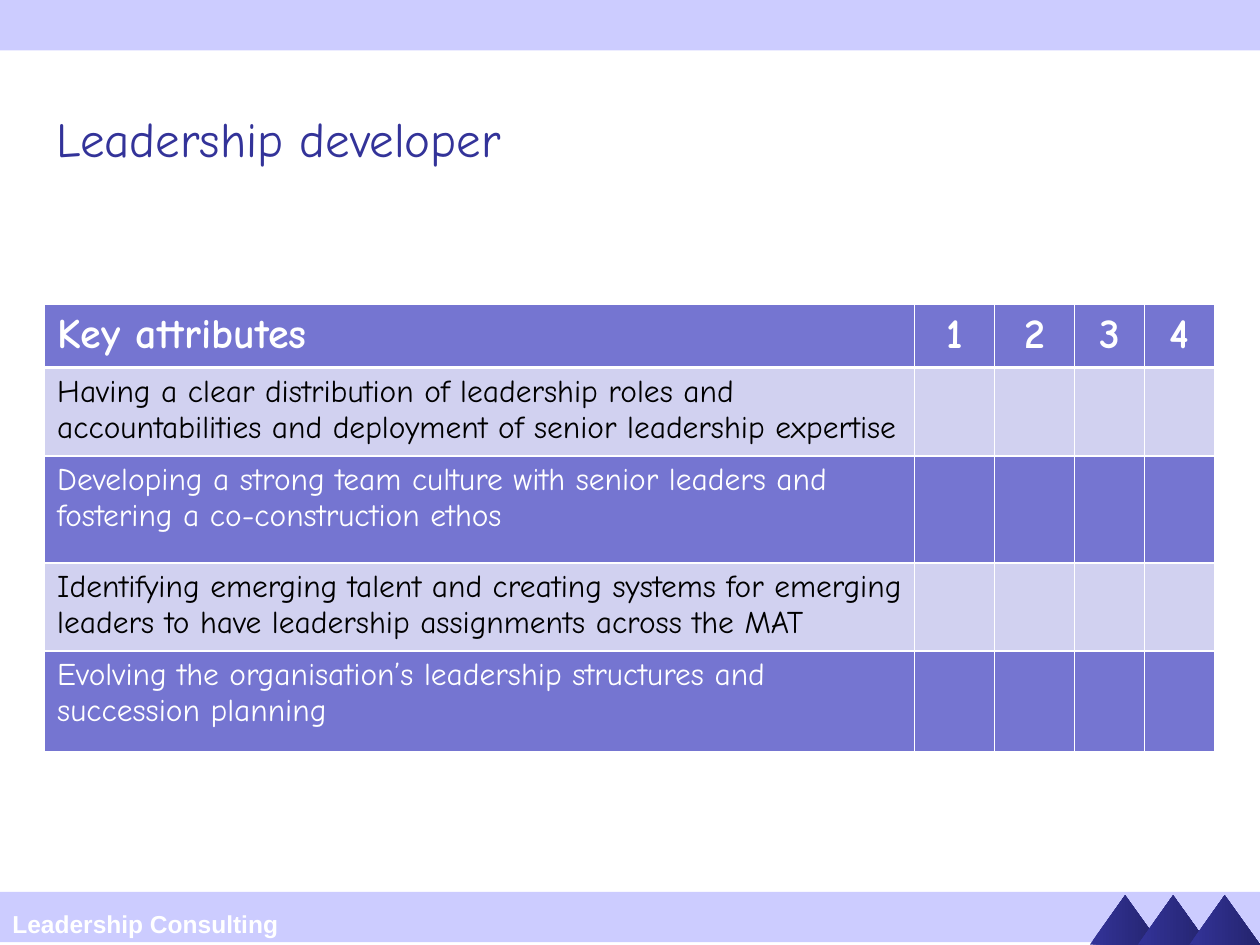
from lxml.etree import SubElement
from pptx import Presentation
from pptx.dml.color import RGBColor
from pptx.enum.shapes import MSO_SHAPE
from pptx.enum.text import MSO_ANCHOR, PP_ALIGN
from pptx.oxml.ns import qn
from pptx.util import Pt

COLORS = {
    "band": "CCCCFF",
    "navy": "333399",
    "shade": "24246D",
    "strong": "7575D1",
    "pale": "D1D1F0",
    "white": "FFFFFF",
    "black": "000000",
}
BODY_FONT = "Comic Neue"
ATTRIBUTES = [
    "Having a clear distribution of leadership roles and accountabilities and deployment of senior leadership expertise",
    "Developing a strong team culture with senior leaders and fostering a co-construction ethos",
    "Identifying emerging talent and creating systems for emerging leaders to have leadership assignments across the MAT",
    "Evolving the organisation’s leadership structures and succession planning",
]
ROWS = [["Key attributes", "1", "2", "3", "4"]] + [[text] + [""] * 4 for text in ATTRIBUTES]
COLUMN_WIDTHS = [497.2, 45.7, 45.7, 40, 40]
ROW_HEIGHTS = [34.3, 48.6, 61.1, 48.6, 57.7]


def color(name):
    return RGBColor.from_string(COLORS[name])


def style(para, font, size, ink, bold=False):
    para.font.name = font
    para.font.size = Pt(size)
    para.font.color.rgb = color(ink)
    para.font.bold = bold


def add_plain_shape(page, kind, left, top, width, height):
    shape = page.shapes.add_shape(kind, Pt(left), Pt(top), Pt(width), Pt(height))
    shape.shadow.inherit = False
    shape.line.fill.background()
    return shape


def add_text(page, text, left, top, width, height, anchor, *look):
    box = page.shapes.add_textbox(Pt(left), Pt(top), Pt(width), Pt(height))
    frame = box.text_frame
    frame.word_wrap = True
    frame.vertical_anchor = anchor
    para = frame.paragraphs[0]
    para.text = text
    style(para, *look)


def add_band(page, left, top, width, height):
    band = add_plain_shape(page, MSO_SHAPE.RECTANGLE, left, top, width, height)
    band.fill.solid()
    band.fill.fore_color.rgb = color("band")


def add_footer(page, left, top, width, height):
    add_band(page, left, top, width, height)
    for offset in (622.8, 650.2, 679.7):
        peak = add_plain_shape(page, MSO_SHAPE.ISOSCELES_TRIANGLE, left + offset, top + 2, 40.3, 28.2)
        peak.fill.gradient()
        peak.fill.gradient_angle = 0
        for stop, name in zip(peak.fill.gradient_stops, ("navy", "shade")):
            stop.color.rgb = color(name)
    add_text(page, "Leadership Consulting", left, top + 6.4, 204.5, 24, MSO_ANCHOR.TOP,
             "Arial", 14, "white", True)


def add_borders(cell, is_first, is_last):
    properties = cell._tc.get_or_add_tcPr()
    widths = {"lnL": 1, "lnR": 1, "lnT": 1 if is_first else 1.5, "lnB": 1 if is_last else 1.5}
    for side, width in widths.items():
        line = SubElement(properties, qn(f"a:{side}"), w=str(Pt(width)))
        fill = SubElement(line, qn("a:solidFill"))
        SubElement(fill, qn("a:srgbClr"), val=COLORS["white"])


def add_attribute_table(page, left, top):
    table = page.shapes.add_table(
        len(ROWS), len(COLUMN_WIDTHS), Pt(left), Pt(top),
        Pt(sum(COLUMN_WIDTHS)), Pt(sum(ROW_HEIGHTS))).table
    for column, width in zip(table.columns, COLUMN_WIDTHS):
        column.width = Pt(width)
    for row, height in zip(table.rows, ROW_HEIGHTS):
        row.height = Pt(height)
    for row_index, texts in enumerate(ROWS):
        is_header = row_index == 0
        is_pale = row_index % 2 == 1
        for column_index, text in enumerate(texts):
            cell = table.cell(row_index, column_index)
            add_borders(cell, is_header, row_index == len(ROWS) - 1)
            cell.fill.solid()
            cell.fill.fore_color.rgb = color("pale" if is_pale else "strong")
            para = cell.text_frame.paragraphs[0]
            para.text = text
            para.alignment = PP_ALIGN.CENTER if column_index else PP_ALIGN.LEFT
            style(para, BODY_FONT, 24 if is_header else 18, "black" if is_pale else "white", is_header)


def main():
    deck = Presentation()
    deck.slide_width, deck.slide_height = Pt(720), Pt(540)
    page = deck.slides.add_slide(deck.slide_layouts[6])
    add_footer(page, 0, 509.6, 720, 28.8)
    add_band(page, 0, 0, 720, 28.8)
    add_text(page, "Leadership developer", 25.2, 43.2, 694.8, 71.3, MSO_ANCHOR.MIDDLE,
             BODY_FONT, 28, "navy")
    add_attribute_table(page, 25.5, 174)
    deck.save("out.pptx")


if __name__ == "__main__":
    main()
